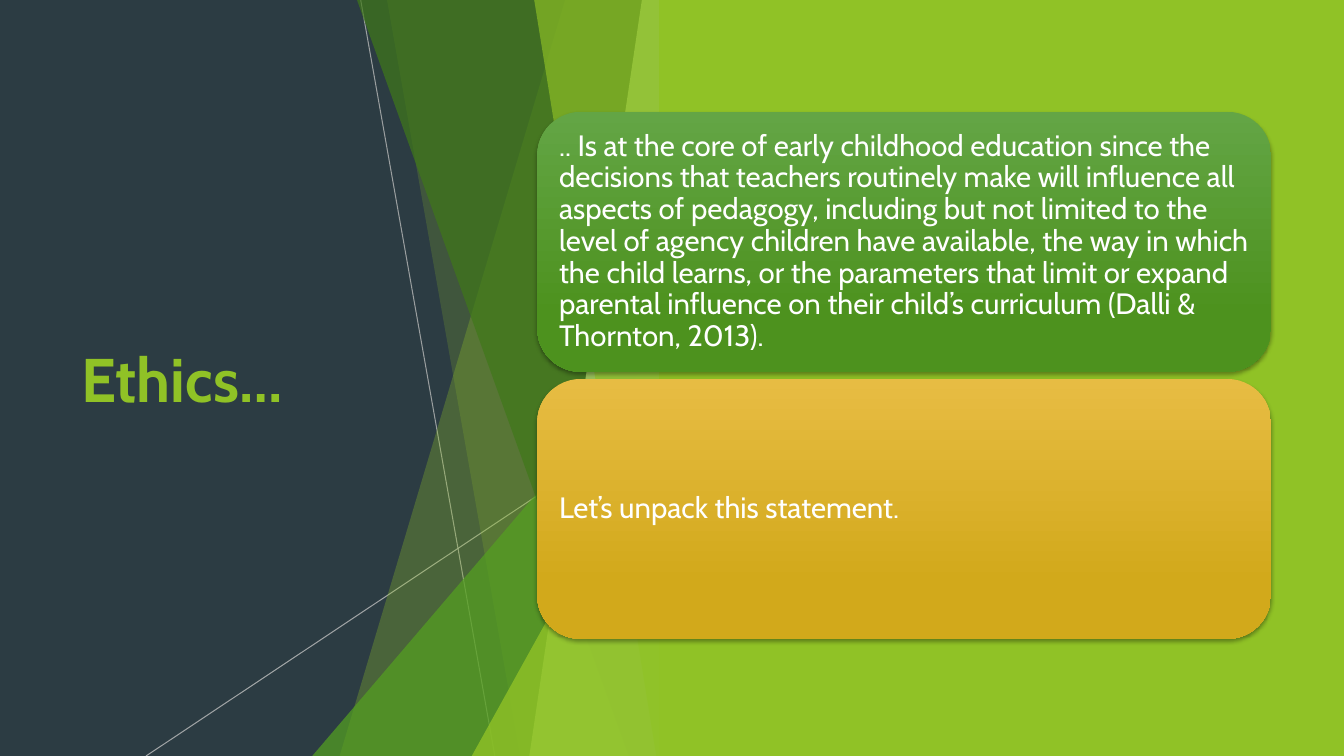
from dataclasses import dataclass

from lxml.etree import SubElement
from pptx import Presentation
from pptx.dml.color import RGBColor
from pptx.enum.shapes import MSO_CONNECTOR, MSO_SHAPE
from pptx.enum.text import MSO_ANCHOR
from pptx.oxml.ns import qn
from pptx.util import Cm, Pt

# Content
TITLE = "Ethics…"
STATEMENTS = [
    ".. Is at the core of early childhood education since the decisions that "
    "teachers routinely make will influence all aspects of pedagogy, including "
    "but not limited to the level of agency children have available, the way in "
    "which the child learns, or the parameters that limit or expand parental "
    "influence on their child’s curriculum (Dalli & Thornton, 2013).",
    "Let’s unpack this statement.",
]


@dataclass(frozen=True)
class Theme:
    font: str = "Cabin"
    title_size: int = 44
    body_size: int = 21
    slate: str = "2C3C43"
    lime: str = "90C226"
    pale: str = "C0E474"
    green: str = "54A021"
    forest: str = "3F7819"
    line: str = "BFBFBF"
    white: str = "FFFFFF"
    cards: tuple = (("63A545", "4D921E"), ("E7BC43", "D2A91B"))


THEME = Theme()

# Geometry in centimetres
WIDTH, HEIGHT = 33.87, 19.05
FACET_RIGHT, FACET_TOP = 16.92, -0.02
PANEL_LEFT = 16.61
CARD_LEFT, CARD_TOP, CARD_WIDTH, CARD_HEIGHT, CARD_PITCH = 13.54, 2.82, 18.49, 6.55, 6.73

# Start x, start y, end x, end y, opacity
RAYS = [(9.09, 0, 12.47, HEIGHT, 75), (FACET_RIGHT, 10.24, 3.68, HEIGHT, 80)]

# Bands: top-left x, bottom-left x; wedges: left x, apex y; then colour, opacity
FACETS = [
    ("band", 14.25, 8.56, THEME.lime, 30),
    ("band", 9.75, 13.11, THEME.lime, 20),
    ("wedge", 7.87, 8.46, THEME.green, 72),
    ("band", 8.99, 15.85, THEME.forest, 70),
    ("band", 16.18, 13.34, THEME.pale, 70),
    ("band", 13.46, 16.54, THEME.lime, 65),
    ("wedge", 11.89, 9.98, THEME.lime, 80),
]


def set_opacity(fill_owner, percent):
    for color in fill_owner.iter(qn("a:srgbClr")):
        SubElement(color, qn("a:alpha")).set("val", str(percent * 1000))


def paint(shape, color, opacity=100):
    shape.shadow.inherit = False
    shape.line.fill.background()
    shape.fill.solid()
    shape.fill.fore_color.rgb = RGBColor.from_string(color)
    if opacity < 100:
        set_opacity(shape.element.spPr, opacity)


def write(shape, text, *, size, color, bold=False, spacing=None):
    frame = shape.text_frame
    frame.word_wrap = True
    frame.vertical_anchor = MSO_ANCHOR.MIDDLE
    para = frame.paragraphs[0]
    para.line_spacing = spacing
    span = para.add_run()
    span.text = text
    span.font.name = THEME.font
    span.font.size = Pt(size)
    span.font.bold = bold
    span.font.color.rgb = RGBColor.from_string(color)
    return frame, para


def add_ray(page, x1, y1, x2, y2, opacity):
    ray = page.shapes.add_connector(
        MSO_CONNECTOR.STRAIGHT, Cm(x1), Cm(y1), Cm(x2), Cm(y2))
    ray.line.width = Pt(0.75)
    ray.line.color.rgb = RGBColor.from_string(THEME.line)
    set_opacity(ray.element.spPr, opacity)
    SubElement(ray.element.spPr, qn("a:effectLst"))


def add_band(page, top_x, bottom_x):
    outline = page.shapes.build_freeform(Cm(top_x), Cm(FACET_TOP))
    corners = [(FACET_RIGHT, FACET_TOP), (FACET_RIGHT, HEIGHT), (bottom_x, HEIGHT)]
    outline.add_line_segments([(Cm(x), Cm(y)) for x, y in corners], close=True)
    return outline.convert_to_shape()


def add_wedge(page, left, apex):
    wedge = page.shapes.add_shape(
        MSO_SHAPE.ISOSCELES_TRIANGLE,
        Cm(left), Cm(apex), Cm(FACET_RIGHT - left), Cm(HEIGHT - apex))
    wedge.adjustments[0] = 1
    return wedge


def add_card(page, top, text, colors):
    card = page.shapes.add_shape(
        MSO_SHAPE.ROUNDED_RECTANGLE,
        Cm(CARD_LEFT), Cm(top), Cm(CARD_WIDTH), Cm(CARD_HEIGHT))
    card.line.fill.background()
    card.fill.gradient()
    card.fill.gradient_angle = 270
    for stop, color, position in zip(card.fill.gradient_stops, colors, (0, 0.78)):
        stop.color.rgb = RGBColor.from_string(color)
        stop.position = position

    # Soft shadow straight below
    card.shadow.inherit = False
    effects = card.element.spPr.find(qn("a:effectLst"))
    shadow = SubElement(effects, qn("a:outerShdw"), blurRad=str(Pt(3)),
                        dist=str(Pt(2)), dir="5400000", rotWithShape="0")
    SubElement(shadow, qn("a:srgbClr"), val="000000")
    set_opacity(shadow, 35)

    frame, para = write(card, text, size=THEME.body_size, color=THEME.white, spacing=0.9)
    frame.margin_left = frame.margin_right = Cm(0.23)
    frame.margin_top = frame.margin_bottom = Cm(0.23)
    para.alignment = 1


def main():
    deck = Presentation()
    deck.slide_width, deck.slide_height = Cm(WIDTH), Cm(HEIGHT)
    page = deck.slides.add_slide(deck.slide_layouts[5])
    page.background.fill.solid()
    page.background.fill.fore_color.rgb = RGBColor.from_string(THEME.slate)

    # Title
    title = page.shapes.title
    title.left, title.top, title.width, title.height = Cm(1.8), Cm(3.84), Cm(9.86), Cm(11.38)
    frame, para = write(title, TITLE, size=THEME.title_size, color=THEME.lime, bold=True)
    para.alignment = 1

    # Facets
    for ray in RAYS:
        add_ray(page, *ray)
    builders = {"band": add_band, "wedge": add_wedge}
    for kind, first, second, color, opacity in FACETS:
        paint(builders[kind](page, first, second), color, opacity)

    # Right panel
    panel = page.shapes.add_shape(
        MSO_SHAPE.RECTANGLE, Cm(PANEL_LEFT), 0, Cm(WIDTH - PANEL_LEFT), Cm(HEIGHT))
    paint(panel, THEME.lime)

    # Cards
    for index, (text, colors) in enumerate(zip(STATEMENTS, THEME.cards)):
        add_card(page, CARD_TOP + index * CARD_PITCH, text, colors)

    deck.save("out.pptx")


if __name__ == "__main__":
    main()
